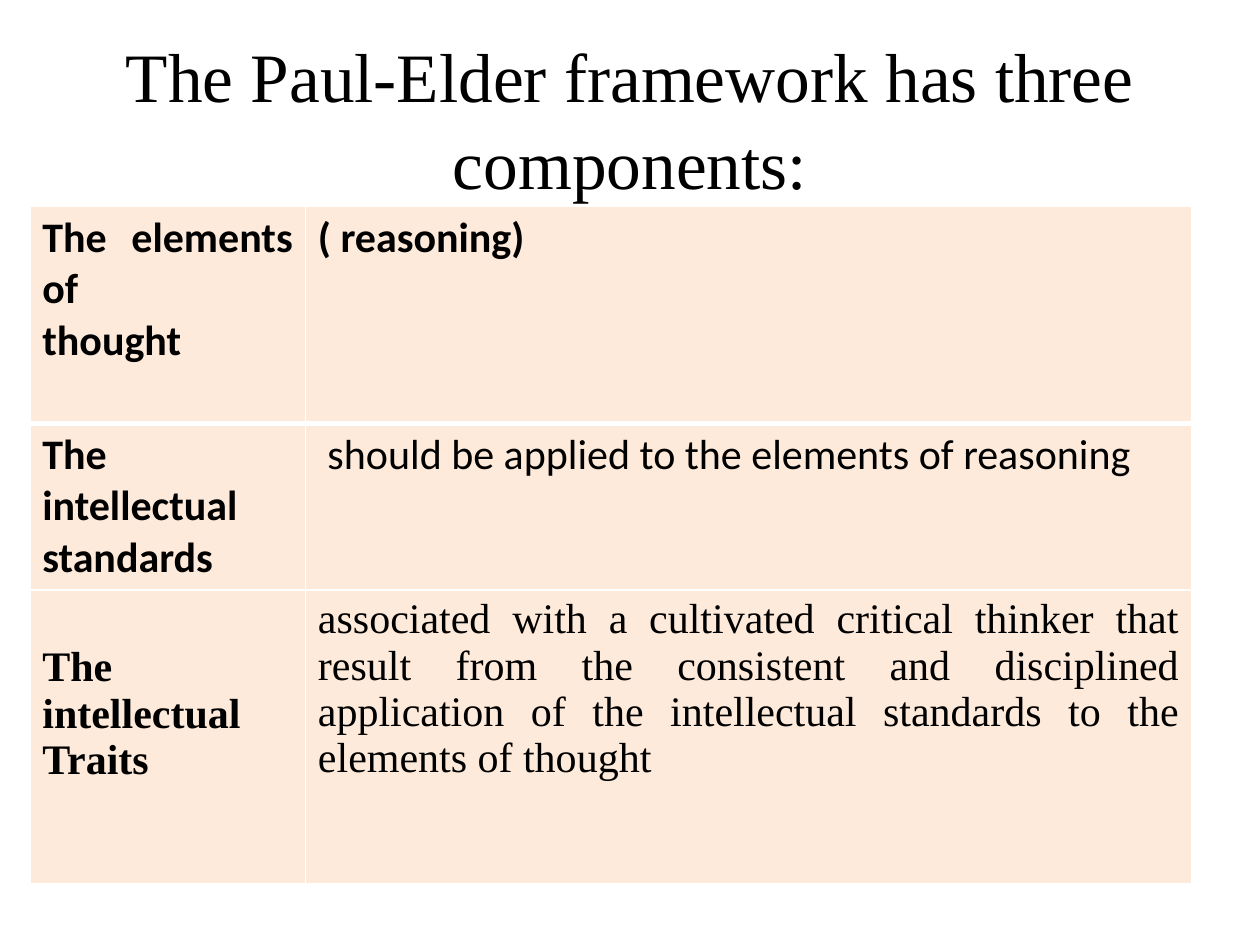
import pptx
import pptx.dml.color
import pptx.enum.text
import pptx.oxml
import pptx.oxml.ns
import pptx.util

Pt = pptx.util.Pt
ALIGN = pptx.enum.text.PP_ALIGN
ANCHOR = pptx.enum.text.MSO_ANCHOR

TITLE = "The Paul-Elder framework has three components:"
SERIF, SANS = "Times New Roman", "Calibri"
BLACK, WHITE, PEACH = "000000", "FFFFFF", "FDEADA"
COLUMN_WIDTHS = (157.5, 506.5)
CELL_MARGIN = 3.6
BLANK_LINE = 27.6

ROWS = [
    {"height": 124, "font": SANS, "bold": (True, True), "offset": 0,
     "texts": ("The elements of \nthought", "( reasoning) ")},
    {"height": 95, "font": SANS, "bold": (True, False), "offset": 0,
     "texts": ("The intellectual \nstandards",
               " should be applied to the elements of reasoning ")},
    {"height": 168, "font": SERIF, "bold": (True, False), "offset": BLANK_LINE,
     "texts": ("The intellectual \nTraits",
               "associated with a cultivated critical thinker that result from "
               "the consistent and disciplined application of the intellectual "
               "standards to the elements of thought ")},
]


def color(hex_text):
    return pptx.dml.color.RGBColor.from_string(hex_text)


def format_text(frame, font, size, align, bold=False):
    frame.word_wrap = True
    for para in frame.paragraphs:
        para.alignment = align
        for span in para.runs:
            span.font.name = font
            span.font.size = Pt(size)
            span.font.bold = bold
            span.font.color.rgb = color(BLACK)


def set_borders(cell, widths):
    properties = cell._tc.get_or_add_tcPr()
    for index, (side, width) in enumerate(widths.items()):
        properties.insert(index, pptx.oxml.parse_xml(
            f'<a:ln{side} {pptx.oxml.ns.nsdecls("a")} w="{Pt(width)}">'
            f'<a:solidFill><a:srgbClr val="{WHITE}"/></a:solidFill></a:ln{side}>'))


def add_title(page):
    title = page.shapes.title
    title.left, title.top, title.width, title.height = map(Pt, (36, 21.6, 648, 90))
    frame = title.text_frame
    frame.text = TITLE
    frame.vertical_anchor = ANCHOR.MIDDLE
    format_text(frame, SERIF, 39.6, ALIGN.CENTER)
    frame.paragraphs[0].line_spacing = 1.04


def add_components(page):
    height = sum(row["height"] for row in ROWS)
    table = page.shapes.add_table(
        len(ROWS), len(COLUMN_WIDTHS), Pt(17), Pt(118),
        Pt(sum(COLUMN_WIDTHS)), Pt(height)).table
    for column, width in zip(table.columns, COLUMN_WIDTHS):
        column.width = Pt(width)
    for r, row in enumerate(ROWS):
        table.rows[r].height = Pt(row["height"])
        for c, (text, bold) in enumerate(zip(row["texts"], row["bold"])):
            cell = table.cell(r, c)
            cell.text_frame.text = text
            format_text(cell.text_frame, row["font"], 24, ALIGN.JUSTIFY, bold)
            cell.margin_top = Pt(CELL_MARGIN + (row["offset"] if c == 0 else 0))
            cell.fill.solid()
            cell.fill.fore_color.rgb = color(PEACH)
            set_borders(cell, {"L": 1, "R": 1, "T": 3 if r == 1 else 1,
                               "B": 3 if r == 0 else 1})


def main():
    deck = pptx.Presentation()
    deck.slide_width, deck.slide_height = Pt(720), Pt(540)
    page = deck.slides.add_slide(deck.slide_layouts[5])
    add_title(page)
    add_components(page)
    deck.save("out.pptx")


if __name__ == "__main__":
    main()
